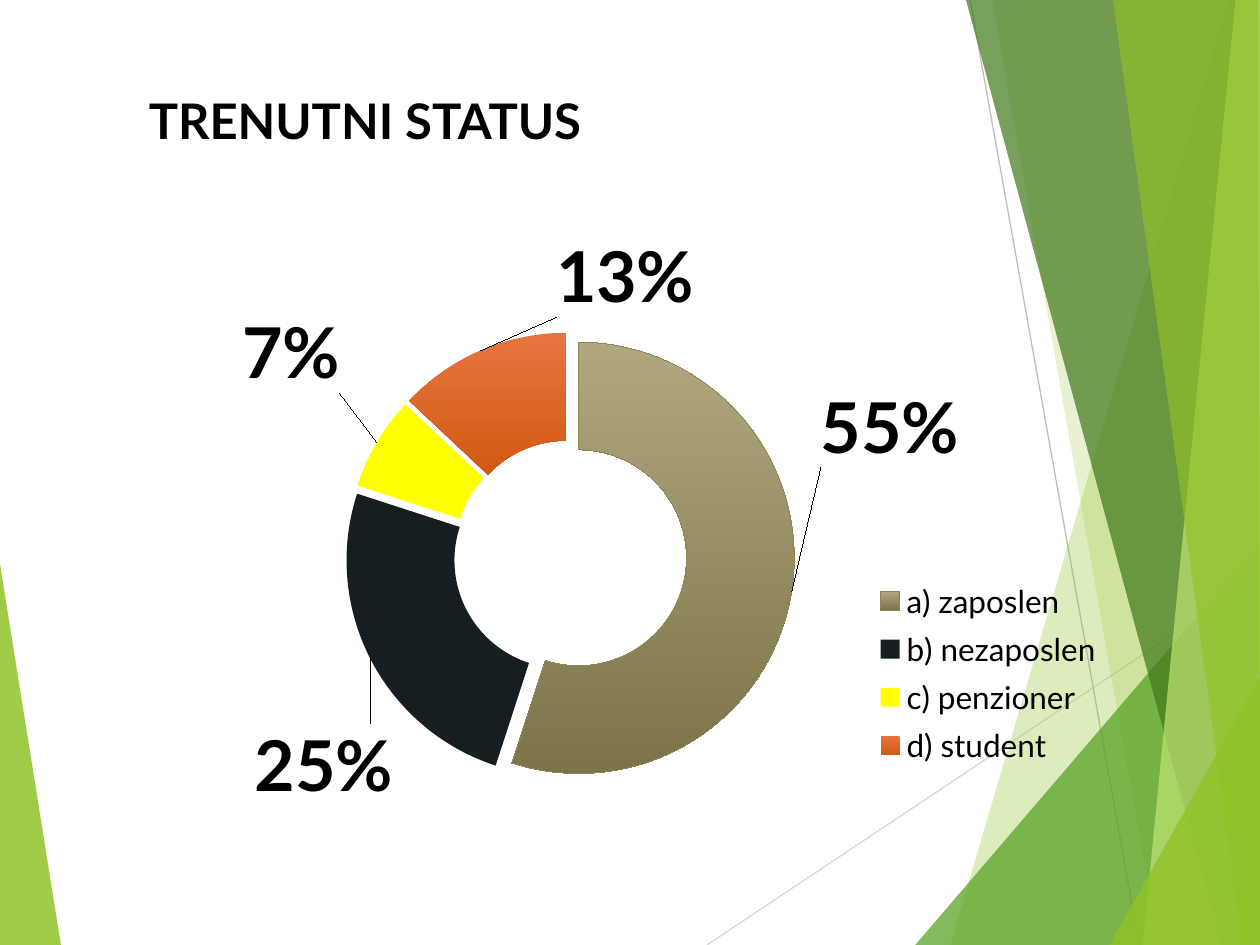
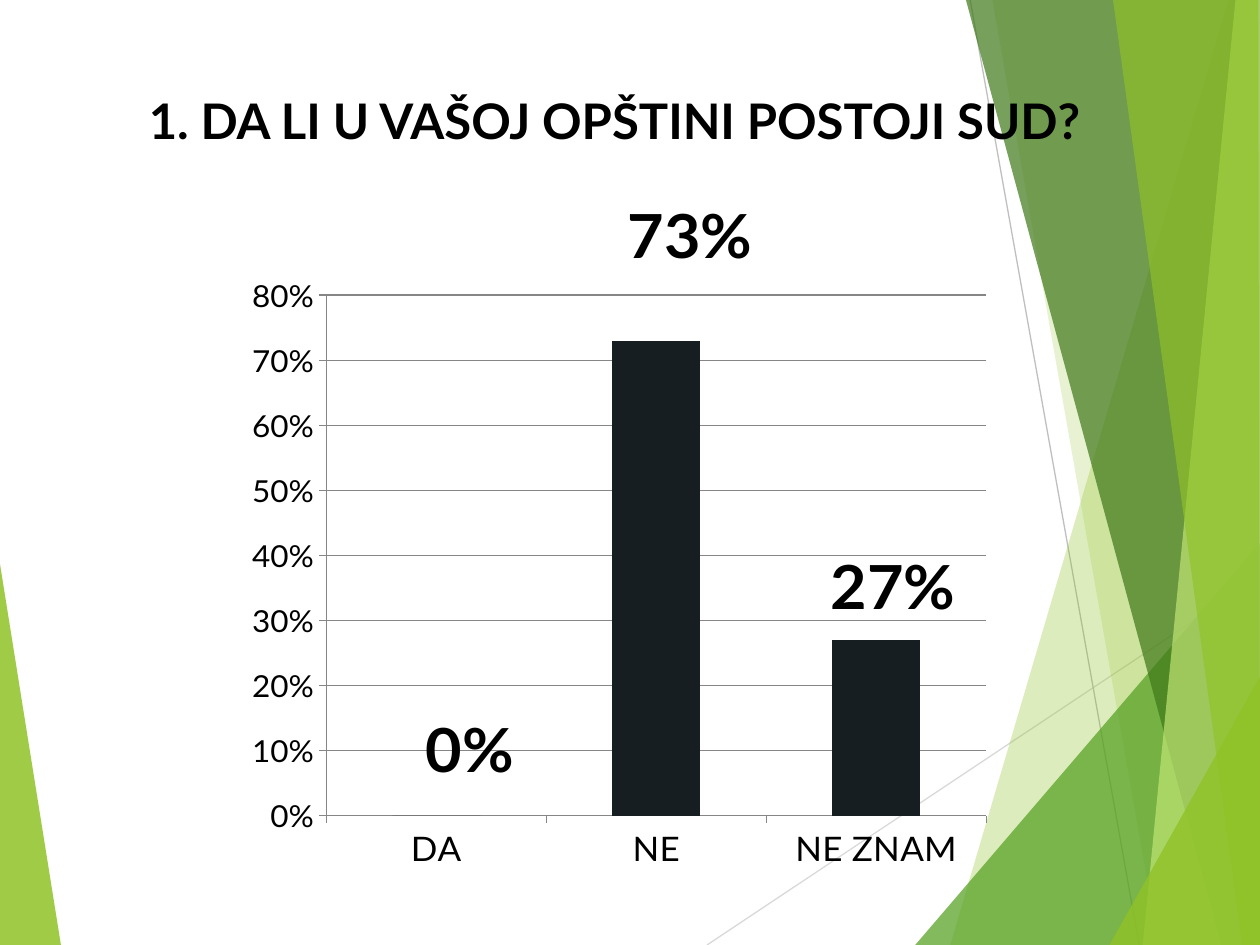
"""Build two survey result slides: current status and local court."""
from dataclasses import dataclass

from lxml import etree
from pptx import Presentation
from pptx.chart.data import CategoryChartData
from pptx.dml.color import RGBColor
from pptx.enum.chart import XL_CHART_TYPE, XL_LEGEND_POSITION, XL_TICK_MARK
from pptx.enum.shapes import MSO_CONNECTOR
from pptx.enum.text import MSO_ANCHOR, MSO_AUTO_SIZE, PP_ALIGN
from pptx.oxml.ns import qn
from pptx.util import Pt

RING = XL_CHART_TYPE.DOUGHNUT
COLUMN = XL_CHART_TYPE.COLUMN_CLUSTERED
RIGHT = XL_LEGEND_POSITION.RIGHT
OUTSIDE = XL_TICK_MARK.OUTSIDE
STRAIGHT = MSO_CONNECTOR.STRAIGHT
TOP = MSO_ANCHOR.TOP
GROW = MSO_AUTO_SIZE.SHAPE_TO_FIT_TEXT
LEFT = PP_ALIGN.LEFT


@dataclass(frozen=True)
class Theme:
    """Fonts, sizes and colours of the deck."""
    font: str = "Lato"
    head: int = 28
    text: int = 18
    axis: int = 20
    ring: int = 40
    bar: int = 36
    black: str = "000000"
    dark: str = "161E22"
    sand: tuple = ("B0A77E", "7C7349")
    edge: str = "8F8552"
    yellow: str = "FFFF00"
    orange: tuple = ("E87440", "D05A12")
    grid: str = "868686"
    lime: str = "90C226"
    green: str = "54A021"
    forest: str = "3F7819"
    pale: str = "C0E474"
    silver: str = "D9D9D9"
    grey: str = "BFBFBF"


THEME = Theme()
WIDE, HIGH = 720, 540
EDGE = 720.7

RAYS = [
    (THEME.silver, (404, HIGH), (EDGE, 329)),
    (THEME.grey, (554.4, 0), (651, HIGH)),
]
BANDS = [
    (THEME.lime, 85, [(-0.7, 316), (35.3, 540.7), (-0.7, HIGH)]),
    (THEME.lime, 30, [(702, 0), (543, HIGH), (EDGE, HIGH), (EDGE, 0)]),
    (THEME.lime, 20, [(567.4, 0), (661.7, HIGH), (EDGE, HIGH), (EDGE, 0)]),
    (THEME.green, 72, [(522.7, HIGH), (EDGE, 309), (EDGE, HIGH)]),
    (THEME.forest, 70, [(552.2, 0), (698.4, HIGH), (EDGE, HIGH), (EDGE, 0)]),
    (THEME.pale, 70, [(706.3, 0), (653, HIGH), (EDGE, HIGH), (EDGE, 0)]),
    (THEME.lime, 65, [(635.8, 0), (710, HIGH), (WIDE, HIGH), (718.6, 0)]),
    (THEME.lime, 80, [(634.3, HIGH), (EDGE, 385.2), (EDGE, HIGH)]),
]


def rgb(code):
    """Turn a hex code into a colour."""
    return RGBColor.from_string(code)


def style(font, size, bold=False):
    """Give a font the deck's face and colour."""
    font.name, font.size, font.bold = THEME.font, Pt(size), bold
    font.color.rgb = rgb(THEME.black)


def band(slide, code, alpha, points):
    """Draw one see-through polygon."""
    pen = slide.shapes.build_freeform(*points[0], scale=float(Pt(1)))
    pen.add_line_segments(points[1:], close=True)
    shape = pen.convert_to_shape()
    shape.shadow.inherit = False
    shape.fill.solid()
    shape.fill.fore_color.rgb = rgb(code)
    shape.line.fill.background()
    tint = next(shape.element.iter(qn("a:srgbClr")))
    etree.SubElement(tint, qn("a:alpha"), val=str(alpha * 1000))
    return shape


def ray(slide, code, start, end):
    """Draw one thin line."""
    line = slide.shapes.add_connector(
        STRAIGHT, *(Pt(n) for n in (*start, *end)))
    line.line.color.rgb = rgb(code)
    line.line.width = Pt(0.75)
    etree.SubElement(line.element.find(qn("p:spPr")), qn("a:effectLst"))
    return line


def adorn(slide):
    """Draw the facets and hand them to the slide's layout."""
    first, *rest = BANDS
    parts = [band(slide, *first)]
    parts += [ray(slide, *item) for item in RAYS]
    parts += [band(slide, *item) for item in rest]
    for part in parts:
        slide.slide_layout.shapes.element.append(part.element)


def head(slide, text):
    """Fill and place the title."""
    title = slide.shapes.title
    title.left, title.top, title.width, title.height = (
        Pt(n) for n in (77.8, 48.2, 612, 41))
    frame = title.text_frame
    frame.text = text
    frame.word_wrap = True
    frame.auto_size = GROW
    frame.vertical_anchor = TOP
    line = frame.paragraphs[0]
    line.alignment = LEFT
    style(line.runs[0].font, THEME.head, True)


def place(parent, index, spot, inner=False):
    """Set a manual layout: x and y, with width and height for a box."""
    for old in parent.findall(qn("c:layout")):
        parent.remove(old)
    outer = etree.Element(qn("c:layout"))
    node = etree.SubElement(outer, qn("c:manualLayout"))
    pairs = [("layoutTarget", "inner")] if inner else []
    if len(spot) == 4:
        pairs += [("xMode", "edge"), ("yMode", "edge")]
    pairs += zip("xywh", spot)
    for name, value in pairs:
        etree.SubElement(node, qn("c:" + name), val=str(value))
    parent.insert(index, outer)


def nodes(chart, tag):
    """List the chart's XML nodes with one tag."""
    return list(chart.element.iter(qn(tag)))


def graph(slide, kind, box, cats, vals, plot):
    """Add a one-series percent chart and return it."""
    data = CategoryChartData(number_format="0%")
    data.categories = cats
    data.add_series("Series 1", vals)
    chart = slide.shapes.add_chart(kind, *(Pt(n) for n in box), data).chart
    chart.has_title = False
    chart.has_legend = False
    style(chart.font, THEME.text)
    place(nodes(chart, "c:plotArea")[0], 0, plot, inner=True)
    return chart


def label(chart, size, shifts, leader):
    """Show the values, each shifted from its usual spot."""
    series = chart.plots[0].series[0]
    labels = series.data_labels
    labels.show_value = True
    labels.number_format = "0%"
    labels.number_format_is_linked = False
    style(labels.font, size, True)
    for index in range(len(shifts)):
        style(series.points[index].data_label.font, size, True)
    for node, shift in zip(nodes(chart, "c:dLbl"), shifts):
        place(node, 1, shift)
    for node in nodes(chart, "c:showLeaderLines"):
        node.set("val", str(int(leader)))


def paint(fill, tone):
    """Fill with one colour, or from top to bottom with two."""
    if isinstance(tone, str):
        fill.solid()
        fill.fore_color.rgb = rgb(tone)
        return
    fill.gradient()
    fill.gradient_angle = 270
    for stop, code in zip(fill.gradient_stops, tone):
        stop.color.rgb = rgb(code)


def status(slide):
    """Draw the ring of current status."""
    chart = graph(
        slide, RING, (113.8, 113.8, 540, 373.7),
        ["a) zaposlen", "b) nezaposlen", "c) penzioner", "d) student"],
        [0.55, 0.25, 0.07, 0.13], (0.155, 0.19, 0.475, 0.713))
    chart.plots[0].vary_by_categories = True
    series = chart.plots[0].series[0]
    tones = (THEME.sand, THEME.dark, THEME.yellow, THEME.orange)
    for index, tone in enumerate(tones):
        paint(series.points[index].format.fill, tone)
    series.points[0].format.line.color.rgb = rgb(THEME.edge)
    burst = etree.Element(qn("c:explosion"), val="8")
    nodes(chart, "c:dPt")[0].addprevious(burst)
    label(chart, THEME.ring,
          [(0.16, -0.24), (-0.1, 0.2), (-0.14, -0.18), (0.13, -0.19)], True)
    chart.has_legend = True
    legend = chart.legend
    legend.position = RIGHT
    legend.include_in_layout = False
    style(legend.font, THEME.text)
    place(nodes(chart, "c:legend")[0], 1, (0.71, 0.57, 0.25, 0.31))


def court(slide):
    """Draw the columns of answers about the court."""
    chart = graph(
        slide, COLUMN, (126, 113.8, 480, 383.8), ["DA", "NE", "NE ZNAM"],
        [0, 0.73, 0.27], (0.126, 0.11, 0.786, 0.805))
    plot = chart.plots[0]
    plot.gap_width = 150
    plot.vary_by_categories = False
    paint(plot.series[0].format.fill, THEME.dark)
    label(chart, THEME.bar,
          [(0.04, -0.04), (0.04, -0.1), (0.02, -0.02)], False)
    across, up = chart.category_axis, chart.value_axis
    for axis, size in ((across, THEME.axis), (up, THEME.text)):
        axis.major_tick_mark = OUTSIDE
        axis.format.line.color.rgb = rgb(THEME.grid)
        style(axis.tick_labels.font, size)
    up.minimum_scale, up.maximum_scale, up.major_unit = 0, 0.8, 0.1
    up.has_major_gridlines = True
    up.major_gridlines.format.line.color.rgb = rgb(THEME.grid)
    up.tick_labels.number_format = "0%"
    up.tick_labels.number_format_is_linked = False


def main():
    """Build and save the deck."""
    deck = Presentation()
    deck.slide_width, deck.slide_height = Pt(WIDE), Pt(HIGH)
    layout = deck.slide_layouts.get_by_name("Title Only")
    pages = [
        ("TRENUTNI STATUS", status),
        ("1. DA LI U VAŠOJ OPŠTINI POSTOJI SUD?", court),
    ]
    for index, (text, draw) in enumerate(pages):
        slide = deck.slides.add_slide(layout)
        if index == 0:
            adorn(slide)
        head(slide, text)
        draw(slide)
    deck.save("out.pptx")


if __name__ == "__main__":
    main()
